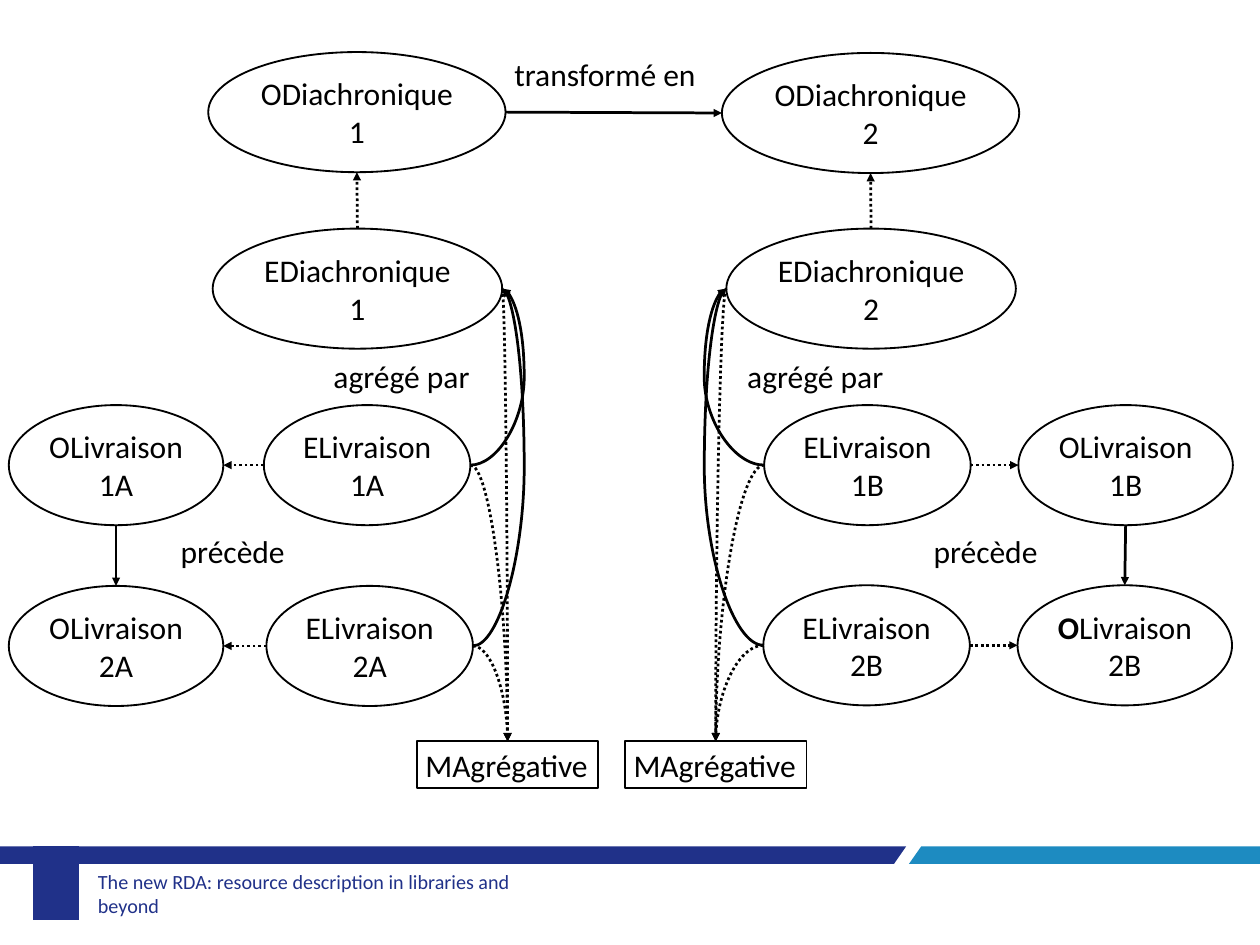
from lxml import etree
from pptx import Presentation
from pptx.dml.color import RGBColor
from pptx.enum.dml import MSO_LINE
from pptx.enum.shapes import MSO_CONNECTOR as LINK, MSO_SHAPE as SHAPE
from pptx.enum.text import MSO_ANCHOR as ANCHOR, PP_ALIGN as ALIGN
from pptx.oxml.ns import qn
from pptx.util import Pt

color = RGBColor.from_string
BLACK, NAVY, BLUE = "000000", "203189", "1D8BC1"
TOP, LEFT, BOTTOM, RIGHT = range(4)

deck = Presentation()
deck.slide_width, deck.slide_height = Pt(1028), Pt(771)
page = deck.slides.add_slide(deck.slide_layouts[6])
shapes = page.shapes


def write(box, text, size=25.7, hue=BLACK, align=ALIGN.LEFT,
          anchor=ANCHOR.TOP, wrap=False, bold_start=0):
    frame = box.text_frame
    frame.word_wrap, frame.vertical_anchor = wrap, anchor
    for number, line in enumerate(text.split("\n")):
        para = frame.add_paragraph() if number else frame.paragraphs[0]
        para.alignment = align
        split = 0 if number else bold_start
        for part, bold in ((line[:split], True), (line[split:], False)):
            if part:
                span = para.add_run()
                span.text = part
                span.font.name, span.font.size = "Calibri", Pt(size)
                span.font.bold, span.font.color.rgb = bold, color(hue)


def link(start, start_side, end, end_side, dotted=False, preset=None, reach=None):
    kind = LINK.CURVE if preset else LINK.STRAIGHT
    arrow = shapes.add_connector(kind, 0, 0, 0, 0)
    arrow.begin_connect(start, start_side)
    arrow.end_connect(end, end_side)
    # An ellipse has eight joints, so its side middles are the even ones
    for tag, shape, side in (("a:stCxn", start, start_side), ("a:endCxn", end, end_side)):
        if shape.auto_shape_type == SHAPE.OVAL:
            arrow._element.find(".//" + qn(tag)).set("idx", str(side * 2))
    arrow.line.color.rgb, arrow.line.width = color(BLACK), Pt(2.25)
    if dotted:
        arrow.line.dash_style = MSO_LINE.ROUND_DOT
    properties = arrow._element.spPr
    etree.SubElement(properties.find(qn("a:ln")), qn("a:tailEnd"), type="triangle")
    etree.SubElement(properties, qn("a:effectLst"))
    if preset:
        geometry = properties.find(qn("a:prstGeom"))
        geometry.set("prst", preset)
    if reach:
        bend = (Pt(reach) - arrow.begin_x) / (arrow.end_x - arrow.begin_x)
        guides = geometry.find(qn("a:avLst"))
        if guides is None:
            guides = etree.SubElement(geometry, qn("a:avLst"))
        etree.SubElement(guides, qn("a:gd"), name="adj1", fmla=f"val {round(bend * 100000)}")


# Footer bands, tab and text
bands = [
    (NAVY, [(739.4, 690.5), (0, 690.5), (0, 704.9), (729.4, 704.9)]),
    (BLUE, [(1028, 690.5), (751.7, 690.5), (741.6, 704.9), (1028, 704.9)]),
    (NAVY, [(26.6, 751), (64.1, 751), (64.1, 690.5), (26.6, 690.5)]),
]
for hue, corners in bands:
    first, *others = [(Pt(x), Pt(y)) for x, y in corners]
    outline = shapes.build_freeform(*first)
    outline.add_line_segments(others)
    band = outline.convert_to_shape()
    band.shadow.inherit = False
    band.fill.solid()
    band.fill.fore_color.rgb = color(hue)
    band.line.fill.background()

footer = shapes.add_textbox(Pt(74.9), Pt(709.2), Pt(397.4), Pt(39.6))
frame = footer.text_frame
frame.margin_left = frame.margin_right = Pt(5)
frame.margin_top = frame.margin_bottom = Pt(2.9)
write(footer, "The new RDA: resource description in libraries and beyond",
      size=16.4, hue=NAVY, anchor=ANCHOR.MIDDLE, wrap=True)

# Ellipses and aggregate boxes: key, text, left, top, width
nodes = [
    ("OD1", "ODiachronique\n1", 169.9, 42.5, 242.6),
    ("OD2", "ODiachronique\n2", 589, 43.2, 242.6),
    ("ED1", "EDiachronique\n1", 173.5, 186.5, 236.2),
    ("ED2", "EDiachronique\n2", 592.6, 186.5, 236.2),
    ("OL1A", "OLivraison\n1A", 7.2, 330.5, 175),
    ("OL2A", "OLivraison\n2A", 7.2, 478, 175),
    ("OL1B", "OLivraison\n1B", 830.9, 330.5, 175),
    ("OL2B", "OLivraison\n2B", 830.2, 477.5, 175),
    ("EL1A", "ELivraison\n1A", 215.3, 330.5, 168.5),
    ("EL2A", "ELivraison\n2A", 217.4, 478, 168.5),
    ("EL1B", "ELivraison\n1B", 623.5, 330.5, 168.5),
    ("EL2B", "ELivraison\n2B", 622.8, 477.5, 168.5),
    ("MA1", "MAgrégative", 340, 604.8, 148.3),
    ("MA2", "MAgrégative", 509.8, 604.8, 148.3),
]
node = {}
for key, text, left, top, width in nodes:
    boxed = key.startswith("MA")
    shape = shapes.add_shape(SHAPE.RECTANGLE if boxed else SHAPE.OVAL,
                             Pt(left), Pt(top), Pt(width), Pt(38.2 if boxed else 98))
    shape.shadow.inherit = False
    shape.fill.background()
    shape.line.color.rgb, shape.line.width = color(BLACK), Pt(1.5)
    write(shape, text, align=ALIGN.LEFT if boxed else ALIGN.CENTER,
          anchor=ANCHOR.MIDDLE, bold_start=1 if key == "OL2B" else 0)
    node[key] = shape

# Arrows on each side: inner curves face the middle of the page
link(node["OD1"], RIGHT, node["OD2"], LEFT)
for number, letter, inner, outer, reach in (("1", "A", RIGHT, LEFT, 427.7),
                                            ("2", "B", LEFT, RIGHT, 574.6)):
    whole, aggregate = node["ED" + number], node["MA" + number]
    link(whole, TOP, node["OD" + number], BOTTOM, dotted=True)
    link(node["OL1" + letter], BOTTOM, node["OL2" + letter], TOP)
    link(whole, inner, aggregate, TOP, dotted=True, preset="curvedConnector2")
    for issue in ("1" + letter, "2" + letter):
        part = node["EL" + issue]
        link(part, outer, node["OL" + issue], inner, dotted=True)
        link(part, inner, whole, inner, preset="curvedConnector3", reach=reach)
        link(part, inner, aggregate, TOP, dotted=True, preset="curvedConnector2")

# Relation labels
for text, left, top, width in [
    ("transformé en", 412.6, 41, 163.4),
    ("précède", 140.4, 430.6, 100),
    ("précède", 754.6, 430.6, 100),
    ("agrégé par", 265, 288, 126.7),
    ("agrégé par", 602.6, 287.5, 126.7),
]:
    write(shapes.add_textbox(Pt(left), Pt(top), Pt(width), Pt(38.2)), text)

deck.save("out.pptx")
